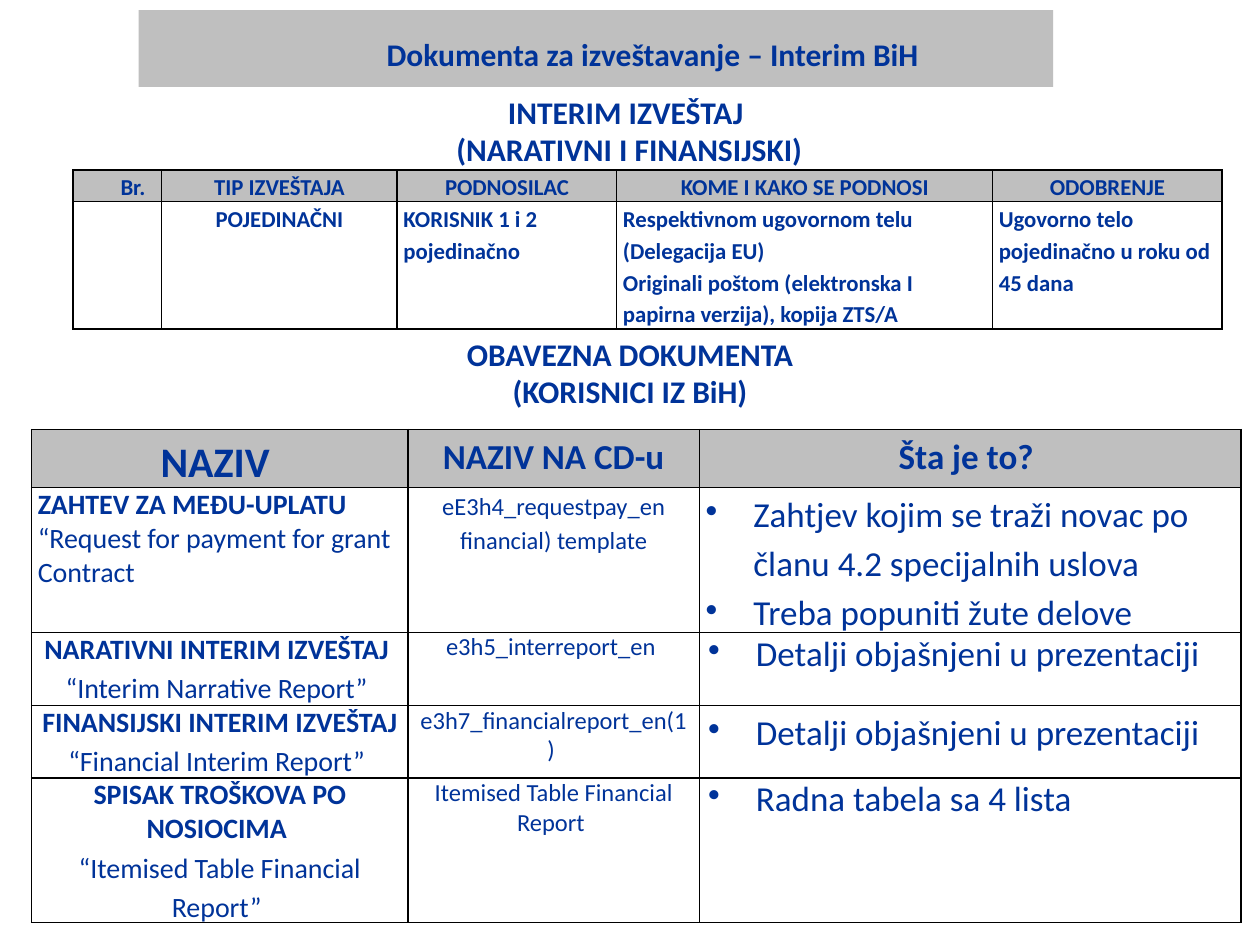
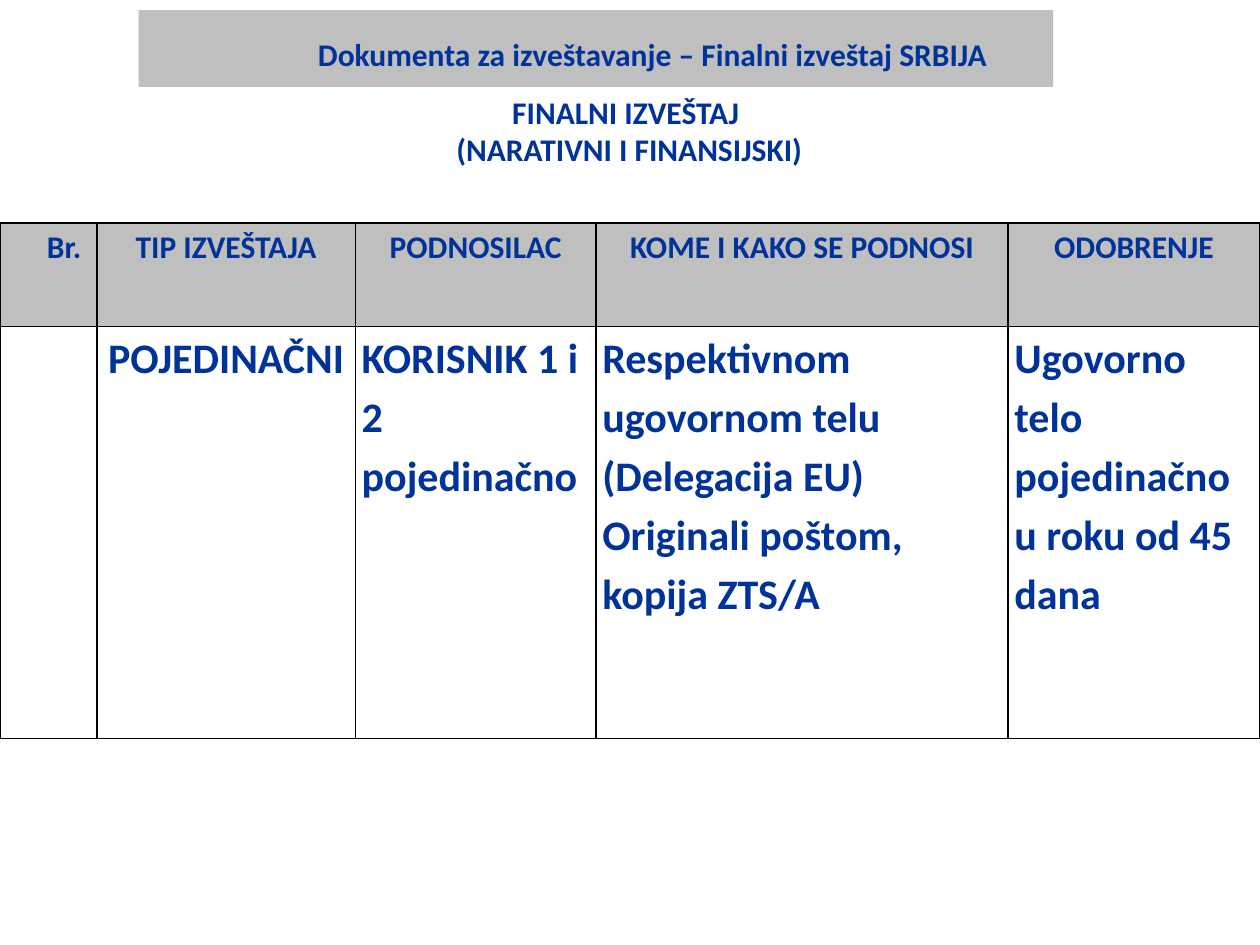
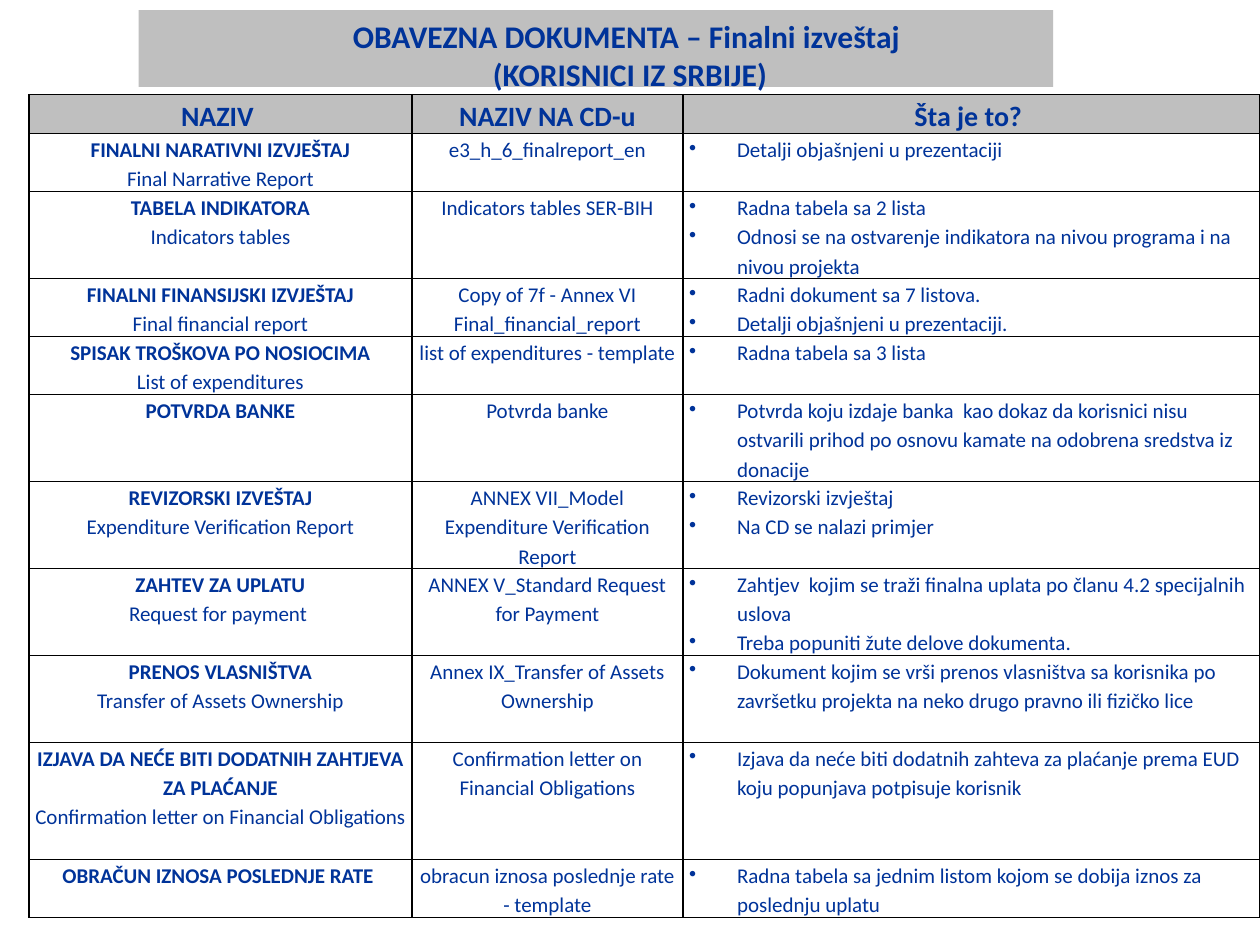
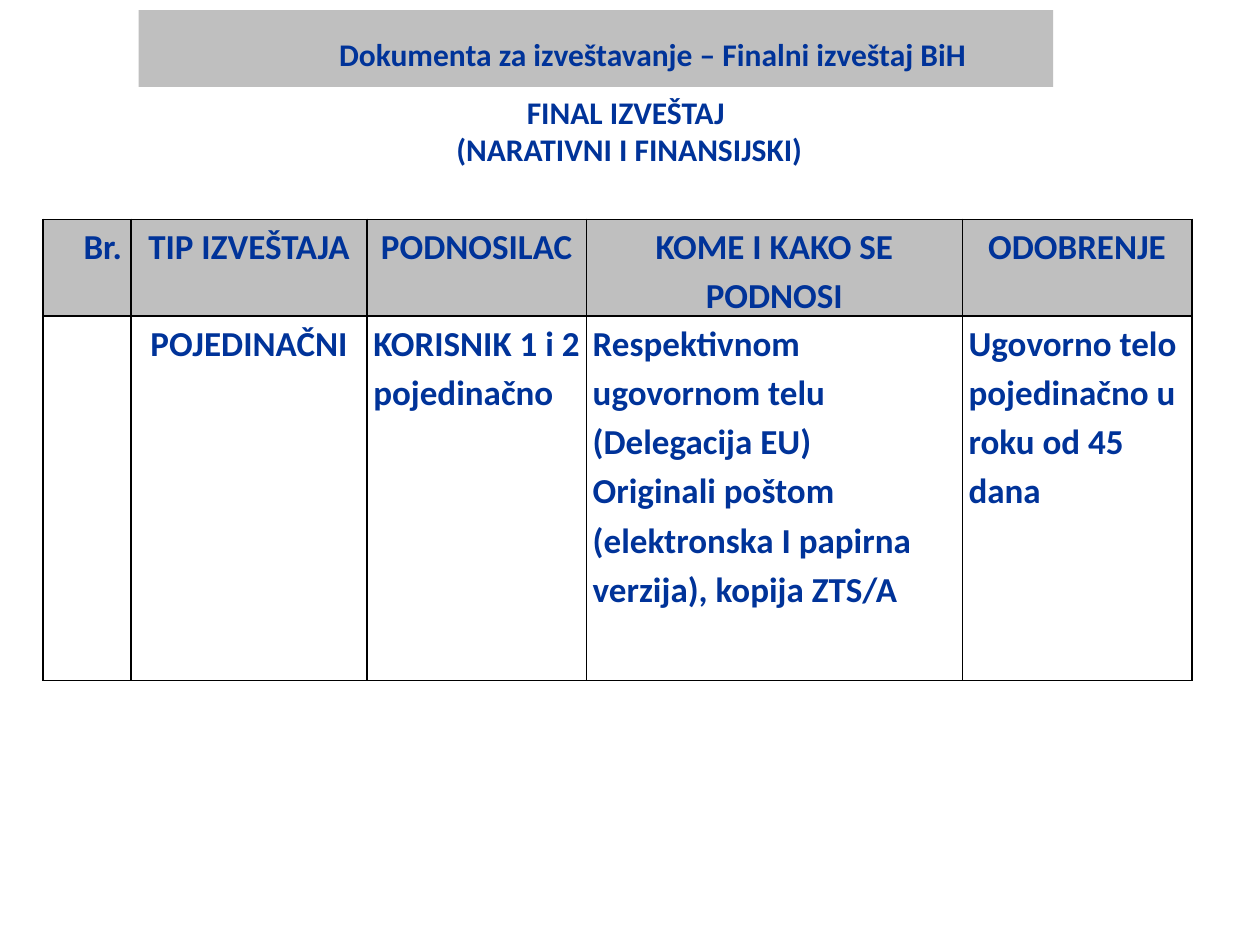
from lxml import etree
from pptx import Presentation
from pptx.dml.color import RGBColor
from pptx.enum.shapes import MSO_SHAPE
from pptx.enum.text import MSO_ANCHOR, MSO_AUTO_SIZE, PP_ALIGN
from pptx.oxml.ns import qn
from pptx.util import Inches, Pt

LEFT, CENTER = PP_ALIGN.LEFT, PP_ALIGN.CENTER
MIDDLE = MSO_ANCHOR.MIDDLE
GROW = MSO_AUTO_SIZE.SHAPE_TO_FIT_TEXT
RECTANGLE = MSO_SHAPE.RECTANGLE

COLORS = {"text": "003399", "band": "BFBFBF", "border": "000000"}
FONT = "Calibri"
HEADING_SIZE = 18
SINGLE, LOOSE = (1, 1), (1.15, 1.15)
OPENING = (1, 1.15)

presentation = Presentation()
presentation.slide_width = Inches(10)
presentation.slide_height = Inches(7.5)
UNIT = presentation.slide_width // 100
layout = presentation.slide_layouts[5]


def write(frame, lines, size, bold_lines=0, align=CENTER, spacings=LOOSE, margin=0, bullet=False):
    for index, line in enumerate(lines):
        paragraph = frame.add_paragraph() if index else frame.paragraphs[0]
        paragraph.text = line
        paragraph.alignment = align
        paragraph.line_spacing = spacings[min(index, 1)]
        properties = paragraph._p.get_or_add_pPr()
        if margin:
            properties.set("marL", str(Inches(margin)))
        if bullet:
            properties.set("indent", str(-Inches(margin)))
            etree.SubElement(properties, qn("a:buChar")).set("char", "•")
        paragraph.font.name = FONT
        paragraph.font.size = Pt(size)
        paragraph.font.bold = index < bold_lines
        paragraph.font.color.rgb = RGBColor.from_string(COLORS["text"])


def add_grid(slide, left, top, widths, heights):
    frame = slide.shapes.add_table(
        len(heights), len(widths), round(left * UNIT), round(top * UNIT),
        round(sum(widths) * UNIT), round(sum(heights) * UNIT))
    table = frame.table
    table.first_row = table.horz_banding = False
    for column, width in zip(table.columns, widths):
        column.width = round(width * UNIT)
    for row_index, (row, height) in enumerate(zip(table.rows, heights)):
        row.height = round(height * UNIT)
        for cell in row.cells:
            cell.margin_left = cell.margin_right = Inches(0.05)
            cell.margin_top = cell.margin_bottom = 0
            properties = cell._tc.get_or_add_tcPr()
            for side in ("lnL", "lnR", "lnT", "lnB"):
                line = etree.SubElement(properties, qn("a:" + side), w=str(Pt(1)))
                fill = etree.SubElement(line, qn("a:solidFill"))
                etree.SubElement(fill, qn("a:srgbClr"), val=COLORS["border"])
            if row_index:
                cell.fill.background()
            else:
                cell.fill.solid()
                cell.fill.fore_color.rgb = RGBColor.from_string(COLORS["band"])
    return table


TITLE_BOX = (29.5, 2.3, 44.6, 4)
SUBTITLE_BOX = (35.1, 6.8, 29.7, 7.1)
SCOPE = "(NARATIVNI I FINANSIJSKI)"
REPORT = "Dokumenta za izveštavanje – "
titles = [
    (TITLE_BOX, [REPORT + "Interim BiH"]),
    ((24, 2.3, 55.6, 4), [REPORT + "Finalni izveštaj SRBIJA"]),
    ((26.8, 0.8, 46.4, 7.1), ["OBAVEZNA DOKUMENTA – Finalni izveštaj ", "(KORISNICI IZ SRBIJE)"]),
    ((25.7, 2.3, 52.2, 4), [REPORT + "Finalni izveštaj BiH"]),
]
headings = [
    [(SUBTITLE_BOX, ["INTERIM IZVEŠTAJ ", SCOPE]),
     ((35.9, 26, 28.2, 7.1), ["OBAVEZNA DOKUMENTA", "(KORISNICI IZ BiH)"])],
    [(SUBTITLE_BOX, ["FINALNI IZVEŠTAJ ", SCOPE])],
    [],
    [(SUBTITLE_BOX, ["FINAL IZVEŠTAJ ", SCOPE])],
]

slides = []
for (title_box, title_lines), slide_headings in zip(titles, headings):
    slide = presentation.slides.add_slide(layout)
    slides.append(slide)
    title = slide.shapes.title
    title.left, title.top, title.width, title.height = [round(n * UNIT) for n in title_box]
    texts = [(title, title_lines)]
    for box, lines in slide_headings:
        texts.append((slide.shapes.add_textbox(*[round(n * UNIT) for n in box]), lines))
    for shape, lines in texts:
        shape.text_frame.word_wrap = False
        shape.text_frame.auto_size = GROW
        shape.text_frame.vertical_anchor = MIDDLE
        write(shape.text_frame, lines, HEADING_SIZE, len(lines), spacings=SINGLE)

band = slides[0].shapes.add_shape(RECTANGLE, *[round(n * UNIT) for n in (11, 0.8, 72.6, 6.1)])
band.shadow.inherit = False
band.fill.solid()
band.fill.fore_color.rgb = RGBColor.from_string(COLORS["band"])
band.line.fill.background()
layout.shapes.element.append(band.element)

REPORT_COLUMNS = (7, 18.7, 17.4, 29.8, 18.2)
REPORT_HEADERS = ("Br.", "TIP IZVEŠTAJA", "PODNOSILAC", "KOME I KAKO SE PODNOSI", "ODOBRENJE")
MAIL_AND_PAPER = "Originali poštom (elektronska I papirna verzija), kopija ZTS/A"
reports = [
    (slides[0], 5.8, 13.5, 91.2, (2.5, 10.1), 13, 13, MAIL_AND_PAPER),
    (slides[1], 0, 17.7, 100, (8.2, 32.7), 18, 24, "Originali poštom, kopija ZTS/A"),
    (slides[3], 3.4, 17.4, 91.2, (7.7, 28.9), 20, 20, MAIL_AND_PAPER),
]
for slide, left, top, width, heights, header_size, body_size, delivery in reports:
    widths = [width * column / sum(REPORT_COLUMNS) for column in REPORT_COLUMNS]
    table = add_grid(slide, left, top, widths, heights)
    for column, header in enumerate(REPORT_HEADERS):
        write(table.cell(0, column).text_frame, [header], header_size, 1,
              margin=0 if column else 0.25)
    body = [
        ["POJEDINAČNI"],
        ["KORISNIK 1 i 2 pojedinačno"],
        ["Respektivnom ugovornom telu (Delegacija EU)", delivery],
        ["Ugovorno telo pojedinačno u roku od 45 dana"],
    ]
    for column, lines in enumerate(body, 1):
        write(table.cell(1, column).text_frame, lines, body_size, len(lines),
              CENTER if column == 1 else LEFT)

DOCUMENT_HEADERS = ("NAZIV ", "NAZIV NA CD-u", "Šta je to? ")
ROW_FORMATS = {
    "loose": (CENTER, 0.05, (LOOSE, LOOSE, LOOSE)),
    "request": (LEFT, 0.05, (SINGLE, LOOSE, LOOSE)),
    "tight": (CENTER, 0.07, (OPENING, SINGLE, SINGLE)),
    "loose note": (CENTER, 0.07, (OPENING, SINGLE, LOOSE)),
}
interim_documents = [
    (11.4, "request", ["ZAHTEV ZA MEĐU-UPLATU", "“Request for payment for grant Contract"],
     "eE3h4_requestpay_en financial) template",
     ["Zahtjev kojim se traži novac po članu 4.2 specijalnih uslova", "Treba popuniti žute delove"]),
    (5.8, "tight", ["NARATIVNI INTERIM IZVEŠTAJ ", "“Interim Narrative Report” "],
     "e3h5_interreport_en ", ["Detalji objašnjeni u prezentaciji"]),
    (5.7, "loose note", ["FINANSIJSKI INTERIM IZVEŠTAJ ", "“Financial Interim Report” "],
     "e3h7_financialreport_en(1) ", ["Detalji objašnjeni u prezentaciji"]),
    (11.4, "tight", ["SPISAK TROŠKOVA PO NOSIOCIMA ", "“Itemised Table Financial Report” "],
     "Itemised Table Financial Report ", ["Radna tabela sa 4 lista"]),
]
final_documents = [
    (4.6, "loose", ["FINALNI NARATIVNI IZVJEŠTAJ", "Final Narrative Report"],
     "e3_h_6_finalreport_en", ["Detalji objašnjeni u prezentaciji"]),
    (6.9, "loose", ["TABELA INDIKATORA", "Indicators tables"],
     "Indicators tables SER-BIH",
     ["Radna tabela sa 2 lista",
      "Odnosi se na ostvarenje indikatora na nivou programa i na nivou projekta"]),
    (4.6, "loose", ["FINALNI FINANSIJSKI IZVJEŠTAJ", "Final financial report"],
     "Copy of 7f - Annex VI Final_financial_report",
     ["Radni dokument sa 7 listova.", "Detalji objašnjeni u prezentaciji."]),
    (4.6, "loose", ["SPISAK TROŠKOVA PO NOSIOCIMA", "List of expenditures"],
     "list of expenditures - template", ["Radna tabela sa 3 lista"]),
    (6.9, "loose", ["POTVRDA BANKE"], "Potvrda banke",
     ["Potvrda koju izdaje banka  kao dokaz da korisnici nisu ostvarili prihod "
      "po osnovu kamate na odobrena sredstva iz donacije"]),
    (6.9, "loose", ["REVIZORSKI IZVEŠTAJ", "Expenditure Verification Report"],
     "ANNEX VII_Model Expenditure Verification Report",
     ["Revizorski izvještaj", "Na CD se nalazi primjer"]),
    (6.9, "loose", ["ZAHTEV ZA UPLATU", "Request for payment "],
     "ANNEX V_Standard Request for Payment",
     ["Zahtjev  kojim se traži finalna uplata po članu 4.2 specijalnih uslova",
      "Treba popuniti žute delove dokumenta."]),
    (6.9, "loose", ["PRENOS VLASNIŠTVA", "Transfer of Assets Ownership"],
     "Annex IX_Transfer of Assets Ownership",
     ["Dokument kojim se vrši prenos vlasništva sa korisnika po završetku projekta "
      "na neko drugo pravno ili fizičko lice"]),
    (9.3, "loose", ["IZJAVA DA NEĆE BITI DODATNIH ZAHTJEVA ZA PLAĆANJE",
                    "Confirmation letter on Financial Obligations"],
     "Confirmation letter on Financial Obligations",
     ["Izjava da neće biti dodatnih zahteva za plaćanje prema EUD "
      "koju popunjava potpisuje korisnik"]),
    (4.6, "loose", ["OBRAČUN IZNOSA POSLEDNJE RATE "],
     "obracun iznosa poslednje rate - template",
     ["Radna tabela sa jednim listom kojom se dobija iznos za poslednju uplatu"]),
]
document_tables = [
    (slides[0], 2.5, 34.1, (29.9, 23.1, 43), 4.6, (24, 20, 20), (16, 14, 20), interim_documents),
    (slides[2], 2.3, 7.5, (30.4, 21.5, 45.8), 3.1, (16, 16, 16), (12, 12, 12), final_documents),
]
for slide, left, top, widths, header_height, header_sizes, body_sizes, documents in document_tables:
    heights = [header_height] + [document[0] for document in documents]
    table = add_grid(slide, left, top, widths, heights)
    for column, (header, size) in enumerate(zip(DOCUMENT_HEADERS, header_sizes)):
        write(table.cell(0, column).text_frame, [header], size, 1)
    for row, (height, row_format, names, file_name, notes) in enumerate(documents, 1):
        name_align, side_margin, spacings = ROW_FORMATS[row_format]
        cells = [table.cell(row, column) for column in range(3)]
        for cell in cells:
            cell.margin_left = cell.margin_right = Inches(side_margin)
        name_frame, file_frame, note_frame = [cell.text_frame for cell in cells]
        write(name_frame, names, body_sizes[0], 1, name_align, spacings[0])
        write(file_frame, [file_name], body_sizes[1], spacings=spacings[1])
        write(note_frame, notes, body_sizes[2], align=LEFT, spacings=spacings[2],
              margin=0.38, bullet=True)

presentation.save("out.pptx")
